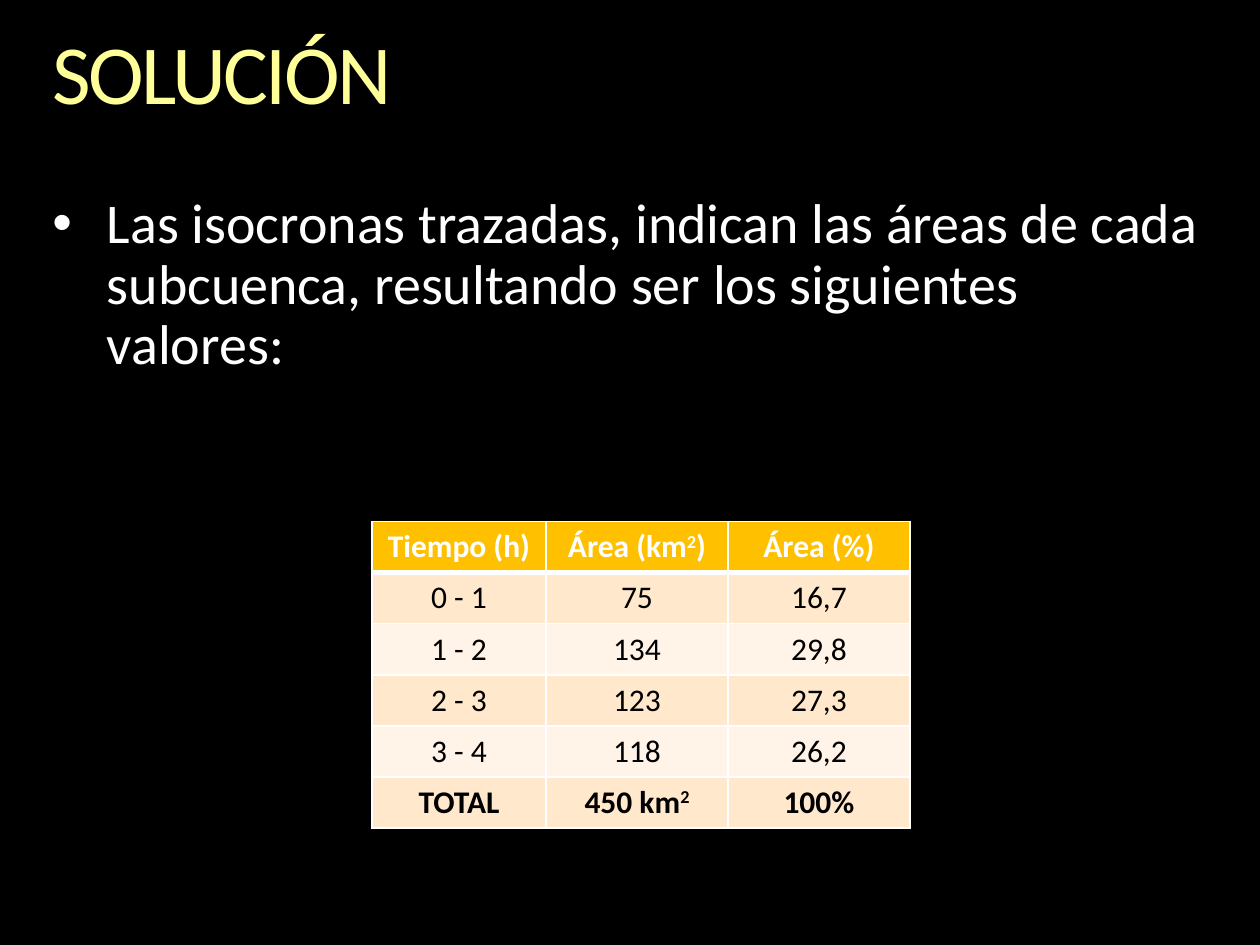
import pptx
import pptx.util
import pptx.dml.color
import pptx.enum.text
import lxml.etree
from pptx.oxml.ns import qn

Pt = pptx.util.Pt
FONT = "Calibri"
COLORS = {
    "background": "000000",
    "title": "FFFF99",
    "white": "FFFFFF",
    "black": "000000",
    "header": "FFC000",
    "band_dark": "FFE8CC",
    "band_light": "FFF4E7",
}


def set_font(paragraph, size, color, bold=False):
    paragraph.font.name = FONT
    paragraph.font.size = Pt(size)
    paragraph.font.bold = bold
    paragraph.font.color.rgb = pptx.dml.color.RGBColor.from_string(COLORS[color])


def set_borders(cell, bottom_width):
    properties = cell._tc.get_or_add_tcPr()
    widths = {"a:lnL": 1, "a:lnR": 1, "a:lnT": 1, "a:lnB": bottom_width}
    for position, (tag, width) in enumerate(widths.items()):
        line = lxml.etree.Element(qn(tag), w=str(Pt(width)))
        fill = lxml.etree.SubElement(line, qn("a:solidFill"))
        lxml.etree.SubElement(fill, qn("a:srgbClr"), val=COLORS["white"])
        properties.insert(position, line)


# Slide with black background
presentation = pptx.Presentation()
presentation.slide_width = Pt(720)
presentation.slide_height = Pt(540)
slide = presentation.slides.add_slide(presentation.slide_layouts[1])
slide.background.fill.solid()
slide.background.fill.fore_color.rgb = pptx.dml.color.RGBColor.from_string(COLORS["background"])

# Title and body placeholders
title, body = slide.shapes.title, slide.placeholders[1]
for shape, top, height, text in (
    (title, 18, 52.6, "SOLUCIÓN"),
    (body, 111.6, 104.4, "Las isocronas trazadas, indican las áreas de cada subcuenca, "
                         "resultando ser los siguientes valores:"),
):
    shape.left, shape.top, shape.width, shape.height = Pt(30), Pt(top), Pt(660), Pt(height)
    frame = shape.text_frame
    frame.text = text
    frame.word_wrap = True
    frame.auto_size = pptx.enum.text.MSO_AUTO_SIZE.NONE
    frame.vertical_anchor = pptx.enum.text.MSO_ANCHOR.TOP
    frame.margin_left = frame.margin_right = frame.margin_top = frame.margin_bottom = 0
    paragraph = frame.paragraphs[0]
    paragraph.alignment = pptx.enum.text.PP_ALIGN.LEFT
    paragraph.line_spacing = 0.9
    paragraph.space_before = Pt(0)

title_paragraph = title.text_frame.paragraphs[0]
set_font(title_paragraph, 48, "title")
title_paragraph.runs[0]._r.get_or_add_rPr().set("spc", "-150")

body_paragraph = body.text_frame.paragraphs[0]
body_properties = body_paragraph._p.get_or_add_pPr()
body_properties.set("marL", str(Pt(31)))
body_properties.set("indent", str(-Pt(31)))
lxml.etree.SubElement(body_properties, qn("a:buFont"), typeface="Arial")
lxml.etree.SubElement(body_properties, qn("a:buChar"), char="•")
set_font(body_paragraph, 32, "white")

# Table of areas; text after ^ is one superscript character
rows = [
    ("Tiempo (h)", "Área (km^2)", "Área (%)"),
    ("0 - 1", "75", "16,7"),
    ("1 - 2", "134", "29,8"),
    ("2 - 3", "123", "27,3"),
    ("3 - 4", "118", "26,2"),
    ("TOTAL", "450 km^2", "100%"),
]
column_widths = (99.5, 104, 104)
row_height = 29.2
table = slide.shapes.add_table(
    len(rows), len(column_widths), Pt(212.5), Pt(298),
    Pt(sum(column_widths)), Pt(row_height * len(rows)),
).table
table.first_row = table.horz_banding = False
for column, width in zip(table.columns, column_widths):
    column.width = Pt(width)

for row_index, values in enumerate(rows):
    table.rows[row_index].height = Pt(row_height)
    is_header = row_index == 0
    is_total = row_index == len(rows) - 1
    band = "header" if is_header else "band_dark" if row_index % 2 else "band_light"
    for column_index, value in enumerate(values):
        cell = table.cell(row_index, column_index)
        cell.fill.solid()
        cell.fill.fore_color.rgb = pptx.dml.color.RGBColor.from_string(COLORS[band])
        set_borders(cell, 3 if is_header else 1)
        paragraph = cell.text_frame.paragraphs[0]
        paragraph.alignment = pptx.enum.text.PP_ALIGN.CENTER
        set_font(paragraph, 18, "white" if is_header else "black", is_header or is_total)
        base, _, raised = value.partition("^")
        paragraph.add_run().text = base
        if raised:
            superscript = paragraph.add_run()
            superscript.text = raised[0]
            superscript._r.get_or_add_rPr().set("baseline", "30000")
        if raised[1:]:
            paragraph.add_run().text = raised[1:]

presentation.save("out.pptx")
